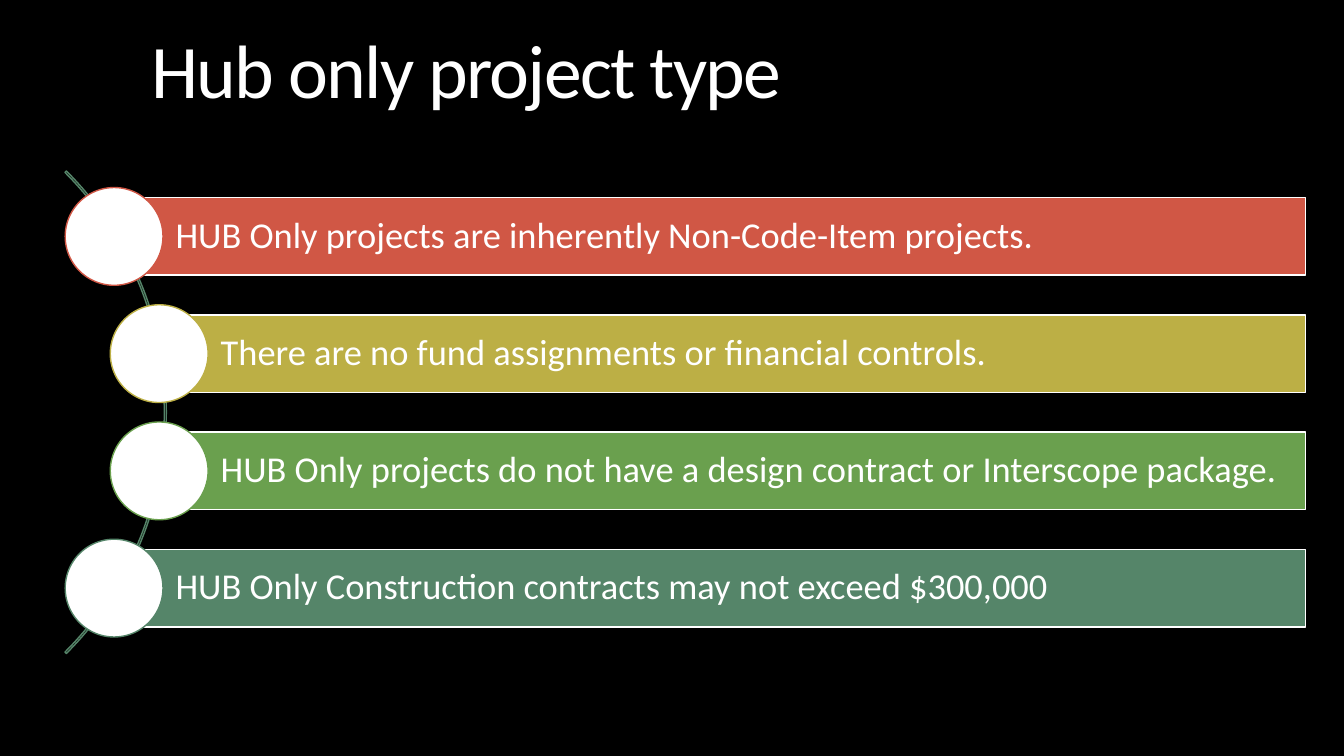
from dataclasses import dataclass

from pptx import Presentation
from pptx.dml.color import RGBColor as RGB
from pptx.enum.shapes import MSO_SHAPE as Shape
from pptx.enum.text import MSO_ANCHOR as Anchor, MSO_AUTO_SIZE as AutoSize, PP_ALIGN as Align
from pptx.util import Inches, Pt

TITLE = "Hub only project type"
# text, bar colour, indent steps along the arc
POINTS = [
    ("HUB Only projects are inherently Non-Code-Item projects.", "D05745", 0),
    ("There are no fund assignments or financial controls.", "BCAF45", 1),
    ("HUB Only projects do not have a design contract or Interscope package.", "6AA04E", 1),
    ("HUB Only Construction contracts may not exceed $300,000", "558569", 0),
]


@dataclass(frozen=True)
class Theme:
    font: str = "Calibri"
    background: str = "000000"
    light: str = "FFFFFF"
    arc: str = "558569"
    title_size: int = 54
    title_spacing: int = -120  # hundredths of a point
    point_size: int = 26
    outline: int = 1


THEME = Theme()
WIDTH, HEIGHT = 13.33, 7.5
MIDDLE = 4.09  # vertical centre of the list and its arc
PITCH = 1.163
INDENT = 0.447
FIRST_CENTER = 1.132  # horizontal centre of an unindented circle
BAR_RIGHT, BAR_HEIGHT = 12.95, 0.77
CIRCLE = 0.97
ARC_LEFT, ARC_SIZE = -5.12, 6.77


def add_outlined(kind, left, top, width, height, line, fill=None):
    shape = slide.shapes.add_shape(kind, *map(Inches, (left, top, width, height)))
    shape.shadow.inherit = False
    shape.line.color.rgb = RGB.from_string(line)
    shape.line.width = Pt(THEME.outline)
    if fill:
        shape.fill.solid()
        shape.fill.fore_color.rgb = RGB.from_string(fill)
    else:
        shape.fill.background()
    return shape


def write(frame, text, size, line_spacing):
    frame.text = text
    frame.word_wrap = True
    frame.auto_size = AutoSize.NONE
    frame.vertical_anchor = Anchor.MIDDLE
    paragraph = frame.paragraphs[0]
    paragraph.alignment = Align.LEFT
    paragraph.line_spacing = line_spacing
    paragraph.font.name = THEME.font
    paragraph.font.size = Pt(size)
    paragraph.font.color.rgb = RGB.from_string(THEME.light)
    return paragraph


deck = Presentation()
deck.slide_width, deck.slide_height = Inches(WIDTH), Inches(HEIGHT)
slide = deck.slides.add_slide(deck.slide_layouts[5])
slide.background.fill.solid()
slide.background.fill.fore_color.rgb = RGB.from_string(THEME.background)

title = slide.shapes.title
title.left, title.top, title.width, title.height = map(Inches, (1.4, 0.17, 10.16, 1.15))
heading = write(title.text_frame, TITLE, THEME.title_size, 0.85)
heading.runs[0].font._element.set("spc", str(THEME.title_spacing))

arc = add_outlined(Shape.BLOCK_ARC, ARC_LEFT, MIDDLE - ARC_SIZE / 2, ARC_SIZE, ARC_SIZE, THEME.arc)
for index, value in enumerate((189, 27, 0.003)):  # 315° to 45°, hairline thickness
    arc.adjustments[index] = value

for row, (text, colour, steps) in enumerate(POINTS):
    center_x = FIRST_CENTER + steps * INDENT
    center_y = MIDDLE + (row - (len(POINTS) - 1) / 2) * PITCH
    bar = add_outlined(Shape.RECTANGLE, center_x, center_y - BAR_HEIGHT / 2,
                       BAR_RIGHT - center_x, BAR_HEIGHT, THEME.light, colour)
    frame = bar.text_frame
    write(frame, text, THEME.point_size, 0.9)
    frame.margin_left = Inches(0.61)
    frame.margin_top = frame.margin_right = frame.margin_bottom = Inches(0.07)
    add_outlined(Shape.OVAL, center_x - CIRCLE / 2, center_y - CIRCLE / 2,
                 CIRCLE, CIRCLE, colour, THEME.light)

deck.save("out.pptx")
